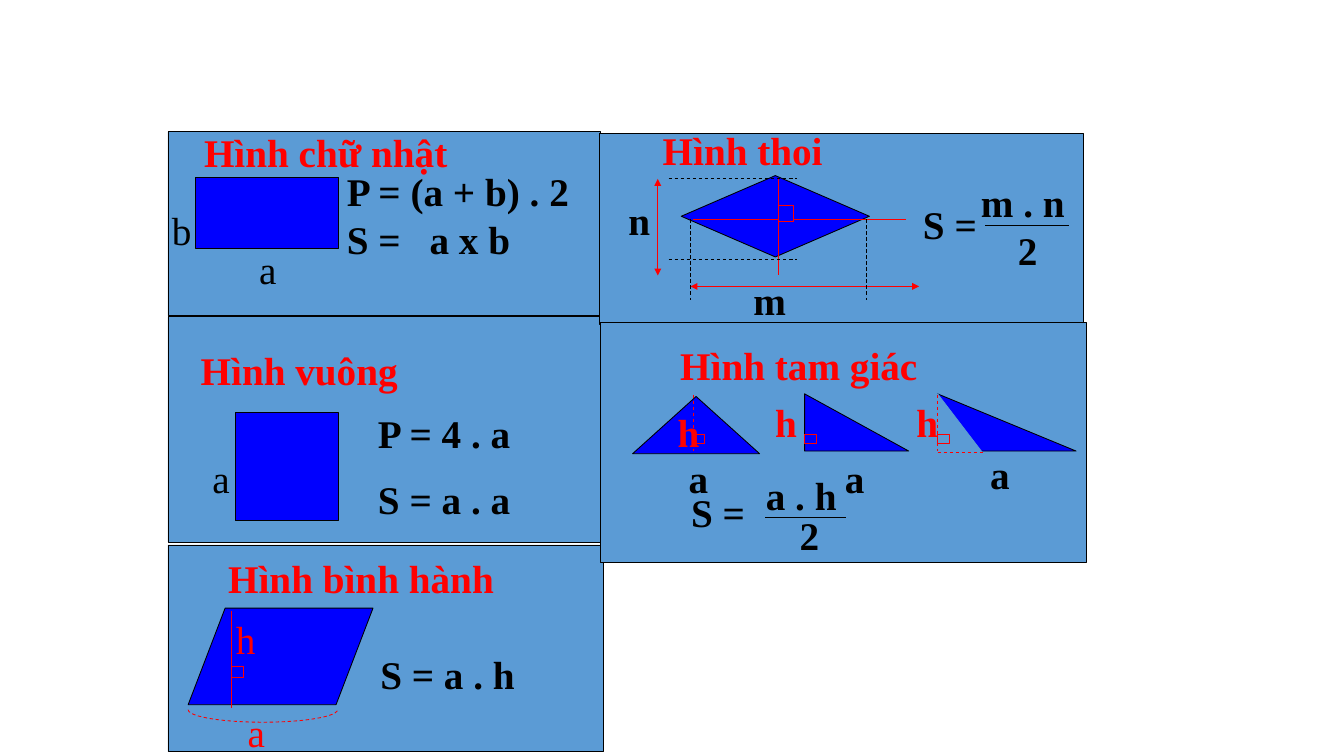
"""Build a slide of perimeter and area formulas for plane figures."""
import dataclasses
import math

import lxml.etree
import pptx
import pptx.dml.color
import pptx.enum.dml
import pptx.enum.shapes
import pptx.enum.text
import pptx.oxml.ns
import pptx.util

Cm = pptx.util.Cm
Shape = pptx.enum.shapes.MSO_SHAPE


@dataclasses.dataclass(frozen=True)
class Theme:
    """Colours, font and sizes of the slide."""
    panel: str = "5B9BD5"
    figure: str = "0000FF"
    accent: str = "FF0000"
    ink: str = "000000"
    font: str = "Times New Roman"
    text_size: float = 33.6
    line_width: float = 0.75
    row_height: float = 1.7


class Board:
    """Draws elements on the current slide in one style."""

    def __init__(self, slide, theme):
        self.shapes = slide.shapes
        self.theme = theme

    def style_line(self, line, color, width=None, dashed=False):
        """Set the colour, width and dash of a line."""
        line.color.rgb = pptx.dml.color.RGBColor.from_string(color)
        line.width = pptx.util.Pt(width or self.theme.line_width)
        if dashed:
            line.dash_style = pptx.enum.dml.MSO_LINE.DASH

    def figure(self, kind, left, top, width, height, fill=None, outline=None):
        """Add a filled preset shape."""
        shape = self.shapes.add_shape(kind, Cm(left), Cm(top), Cm(width), Cm(height))
        shape.shadow.inherit = False
        shape.fill.solid()
        shape.fill.fore_color.rgb = pptx.dml.color.RGBColor.from_string(
            fill or self.theme.figure)
        self.style_line(shape.line, outline or self.theme.ink)

    def panel(self, left, top, width, height):
        """Add the background of one topic."""
        self.figure(Shape.RECTANGLE, left, top, width, height, self.theme.panel)

    def right_angle(self, left, top, width, height, fill=None):
        """Add a right-angle mark."""
        self.figure(Shape.RECTANGLE, left, top, width, height, fill, self.theme.accent)

    def line(self, start, end, color, width=None, dashed=False, arrows=False):
        """Add a straight line, with arrowheads at both ends on request."""
        connector = self.shapes.add_connector(
            pptx.enum.shapes.MSO_CONNECTOR.STRAIGHT,
            Cm(start[0]), Cm(start[1]), Cm(end[0]), Cm(end[1]))
        self.style_line(connector.line, color, width, dashed)
        qualified = pptx.oxml.ns.qn
        if arrows:
            outline = connector.line._get_or_add_ln()
            for tag in ("a:headEnd", "a:tailEnd"):
                lxml.etree.SubElement(outline, qualified(tag), type="triangle")
        lxml.etree.SubElement(connector._element.spPr, qualified("a:effectLst"))

    def bracket(self, center_x, top, radius_x, radius_y, steps=24):
        """Add a dashed lower half of an ellipse."""
        angles = [math.pi * (1 - step / steps) for step in range(steps + 1)]
        points = [(Cm(center_x + radius_x * math.cos(angle)),
                   Cm(top + radius_y * math.sin(angle))) for angle in angles]
        builder = self.shapes.build_freeform(*points[0])
        builder.add_line_segments(points[1:], close=False)
        shape = builder.convert_to_shape()
        shape.shadow.inherit = False
        shape.fill.background()
        self.style_line(shape.line, self.theme.accent, dashed=True)

    def text(self, left, top, width, content, color=None, bold=True,
             height=None, gap=0, tab=None):
        """Add a text box, one paragraph a line."""
        box = self.shapes.add_textbox(
            Cm(left), Cm(top), Cm(width), Cm(height or self.theme.row_height))
        frame = box.text_frame
        frame.text = content
        frame.word_wrap = True
        frame.auto_size = pptx.enum.text.MSO_AUTO_SIZE.SHAPE_TO_FIT_TEXT
        for index, paragraph in enumerate(frame.paragraphs):
            if index and gap:
                paragraph.space_before = pptx.util.Pt(gap)
            if tab:
                qualified = pptx.oxml.ns.qn
                properties = paragraph._p.get_or_add_pPr()
                stops = lxml.etree.SubElement(properties, qualified("a:tabLst"))
                lxml.etree.SubElement(
                    stops, qualified("a:tab"), pos=str(Cm(tab)), algn="l")
            for run in paragraph.runs:
                run.font.name = self.theme.font
                run.font.size = pptx.util.Pt(self.theme.text_size)
                run.font.bold = bold
                run.font.color.rgb = pptx.dml.color.RGBColor.from_string(
                    color or self.theme.ink)

    def title(self, left, top, width, content):
        """Add the name of a figure."""
        self.text(left, top, width, content, self.theme.accent)


def draw_rectangle(board):
    """Draw the rectangle topic."""
    board.panel(5.08, 3.99, 13.08, 5.56)
    board.figure(Shape.RECTANGLE, 5.92, 5.36, 4.32, 2.16)
    board.text(10.24, 4.95, 8.05, "P = (a + b) . 2\nS =\ta x b", height=3.12, tab=2.5)
    board.text(7.59, 7.29, 1.68, "a", bold=False)
    board.text(4.95, 6.1, 1.19, "b", bold=False)
    board.title(5.92, 3.76, 8.15, "Hình chữ nhật")


def draw_parallelogram(board):
    """Draw the parallelogram topic."""
    accent = board.theme.accent
    board.panel(5.08, 16.48, 13.18, 6.25)
    board.title(6.65, 16.64, 10.08, "Hình bình hành")
    board.figure(Shape.FLOWCHART_DATA, 5.69, 18.39, 5.59, 2.92)
    board.line((6.99, 18.47), (6.99, 21.41), accent)
    board.right_angle(7.01, 20.14, 0.36, 0.36)
    board.text(6.88, 18.47, 1.75, "h", accent, bold=False)
    board.bracket(7.95, 21.46, 2.26, 0.38)
    board.text(7.24, 21.29, 1.75, "a", accent, bold=False)
    board.text(11.25, 19.53, 5.94, "S = a . h")


def draw_square(board):
    """Draw the square topic."""
    board.panel(5.08, 9.58, 13.08, 6.81)
    board.figure(Shape.RECTANGLE, 7.11, 12.47, 3.12, 3.28)
    board.text(6.17, 13.61, 1.45, "a", bold=False)
    board.title(5.82, 10.34, 7.14, "Hình vuông")
    board.text(11.18, 12.24, 5.59, "P = 4 . a\nS = a . a", height=3.84, gap=17)


def draw_rhombus(board):
    """Draw the rhombus topic."""
    ink, accent = board.theme.ink, board.theme.accent
    board.panel(18.14, 4.04, 14.63, 5.77)
    board.figure(Shape.DIAMOND, 20.6, 5.31, 5.69, 2.46)
    board.line((23.55, 5.41), (23.55, 8.33), accent)
    board.line((20.96, 6.63), (27.41, 6.63), accent)
    board.right_angle(23.55, 6.22, 0.43, 0.48)
    board.line((19.89, 5.41), (19.89, 8.33), accent, arrows=True)
    board.line((20.88, 8.66), (27.79, 8.66), accent, arrows=True)
    for y in (5.41, 7.85):
        board.line((20.22, y), (24.1, y), ink, dashed=True)
    for x in (20.88, 26.19):
        board.line((x, 6.63), (x, 9.07), ink, dashed=True)
    board.text(18.75, 5.82, 1.93, "n")
    board.text(22.53, 8.23, 2.16, "m")
    board.text(27.66, 5.94, 2.49, "S =")
    board.text(29.41, 5.26, 3.91, "m . n")
    board.line((29.79, 6.81), (32.31, 6.81), ink, width=1)
    board.text(30.53, 6.73, 1.88, "2")
    board.title(19.79, 3.71, 7.37, "Hình thoi")


def draw_triangles(board):
    """Draw the triangle topic."""
    ink, accent, panel = board.theme.ink, board.theme.accent, board.theme.panel
    board.panel(18.16, 9.75, 14.68, 7.26)
    board.figure(Shape.RIGHT_TRIANGLE, 28.35, 11.91, 4.19, 1.73)
    board.figure(Shape.RIGHT_TRIANGLE, 28.35, 11.91, 1.4, 1.83, panel, panel)
    board.figure(Shape.ISOSCELES_TRIANGLE, 19.13, 11.99, 3.84, 1.73)
    board.figure(Shape.RIGHT_TRIANGLE, 24.33, 11.91, 3.15, 1.73)
    for x in (20.96, 28.35):
        board.line((x, 11.93), (x, 13.65), accent, dashed=True)
    board.line((28.35, 13.67), (29.74, 13.67), accent, dashed=True)
    for left, fill in ((20.94, None), (24.33, None), (28.35, panel)):
        board.right_angle(left, 13.14, 0.36, 0.28, fill)
    for left, top in ((20.57, 13.61), (25.3, 13.61), (29.69, 13.49)):
        board.text(left, top, 1.75, "a")
    for left, top in ((20.24, 12.22), (23.19, 11.91), (27.46, 11.91)):
        board.text(left, top, 1.75, "h", accent)
    board.title(20.32, 10.21, 9.09, "Hình tam giác")
    board.text(20.65, 14.63, 2.44, "S =")
    board.text(22.91, 14.12, 3.15, "a . h")
    board.line((23.14, 15.65), (25.58, 15.65), ink, width=1.5)
    board.text(23.93, 15.34, 1.75, "2")


def main():
    """Create and save the presentation."""
    presentation = pptx.Presentation()
    presentation.slide_width, presentation.slide_height = Cm(40.64), Cm(22.86)
    slide = presentation.slides.add_slide(presentation.slide_layouts[6])
    board = Board(slide, Theme())
    for draw in (draw_rectangle, draw_parallelogram, draw_square,
                 draw_rhombus, draw_triangles):
        draw(board)
    presentation.save("out.pptx")


if __name__ == "__main__":
    main()
